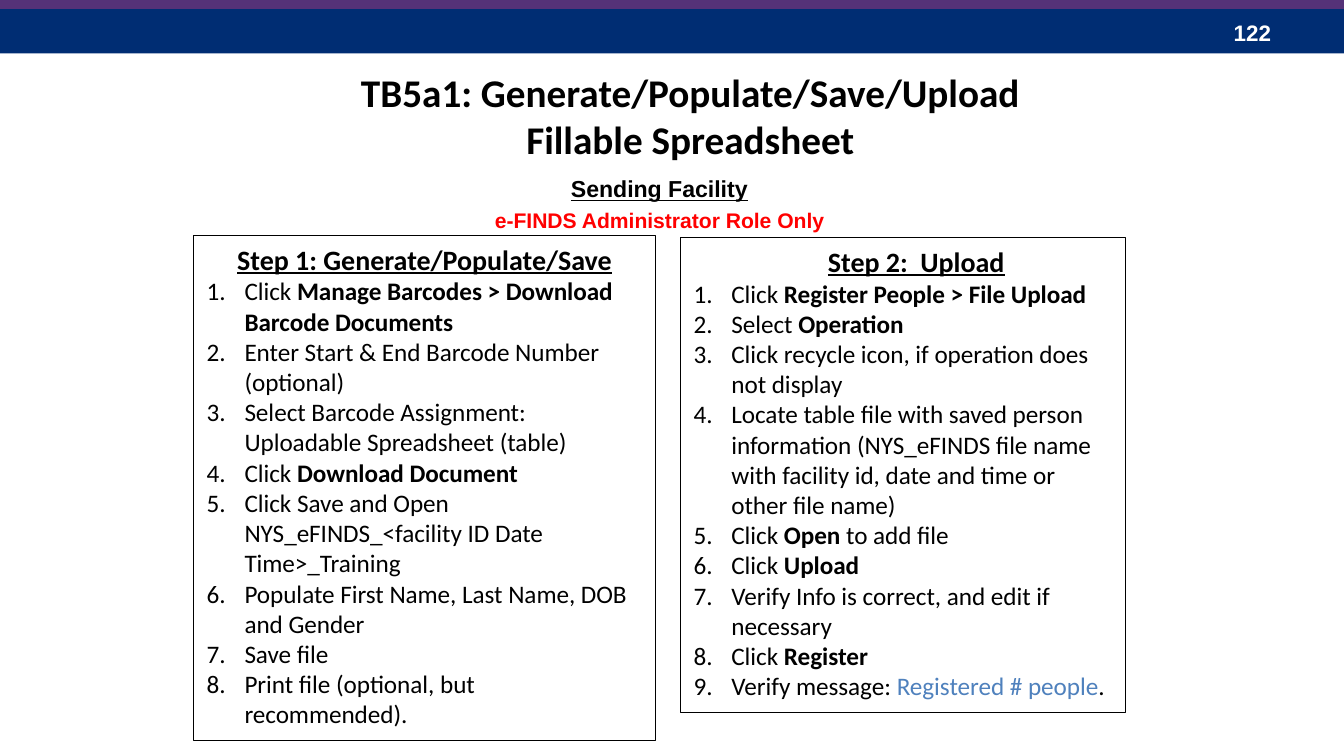
from lxml.etree import SubElement
from pptx import Presentation
from pptx.dml.color import RGBColor
from pptx.enum.shapes import MSO_SHAPE
from pptx.enum.text import MSO_ANCHOR, MSO_AUTO_SIZE, PP_ALIGN
from pptx.oxml.ns import qn
from pptx.util import Pt

COLORS = {"navy": "002D73", "purple": "553278", "white": "FFFFFF",
          "black": "000000", "red": "FF0000", "blue": "4F81BD"}
TITLE = ["TB5a1: Generate/Populate/Save/Upload", "Fillable Spreadsheet"]
SUBTITLES = [("Sending Facility", 12.4, "black", True),
             ("e-FINDS Administrator Role Only", 11.25, "red", False)]
BANDS = [(4.8, 23.8, "navy"), (-1.5, 6.3, "purple")]
PANELS = [
    {"heading": "Step 1: Generate/Populate/Save", "tab": False,
     "box": (103.7, 126.2, 247.7, 270.7),
     "steps": [
         [("Click ", ""), ("Manage Barcodes > Download Barcode Documents", "bold")],
         [("Enter Start & End Barcode Number (optional)", "")],
         [("Select Barcode Assignment: Uploadable Spreadsheet (table)", "")],
         [("Click ", ""), ("Download Document", "bold")],
         [("Click Save and Open NYS_eFINDS_<facility ID Date Time>_Training", "")],
         [("Populate First Name, Last Name, DOB and Gender", "")],
         [("Save file", "")],
         [("Print file (optional, but recommended).", "")]]},
    {"heading": "Step 2:  Upload", "tab": True,
     "box": (364.5, 127.3, 238.5, 254.3),
     "steps": [
         [("Click ", ""), ("Register People > File Upload", "bold")],
         [("Select ", ""), ("Operation", "bold")],
         [("Click recycle icon, if operation does not display", "")],
         [("Locate table file with saved person information (NYS_eFINDS file "
           "name with facility id, date and time or other file name)", "")],
         [("Click ", ""), ("Open", "bold"), (" to add file", "")],
         [("Click ", ""), ("Upload", "bold")],
         [("Verify Info is correct, and edit if necessary", "")],
         [("Click ", ""), ("Register", "bold")],
         [("Verify message: ", ""), ("Registered # people", "blue"), (".", "")]]},
]


def rgb(name):
    return RGBColor.from_string(COLORS[name])


def add_run(p, text, size, font="Calibri", color="black", bold=False, underline=False):
    r = p.add_run()
    r.text = text
    r.font.size, r.font.name = Pt(size), font
    r.font.bold, r.font.underline = bold, underline
    r.font.color.rgb = rgb(color)


def place(sp, left, top, width, height):
    sp.left, sp.top, sp.width, sp.height = Pt(left), Pt(top), Pt(width), Pt(height)


def add_rect(s, left, top, width, height):
    sp = s.shapes.add_shape(MSO_SHAPE.RECTANGLE, Pt(left), Pt(top), Pt(width), Pt(height))
    sp.shadow.inherit = False
    return sp


def next_paragraph(tf, first):
    return tf.paragraphs[0] if first else tf.add_paragraph()


def set_indent(p, left, hanging):
    pPr = p._p.get_or_add_pPr()
    pPr.set("marL", str(Pt(left)))
    pPr.set("indent", str(-Pt(hanging)))
    return pPr


def add_panel(s, panel):
    sp = add_rect(s, *panel["box"])
    sp.fill.background()
    sp.line.color.rgb = rgb("black")
    sp.line.width = Pt(0.75)
    tf = sp.text_frame
    tf.word_wrap = True
    tf.auto_size = MSO_AUTO_SIZE.SHAPE_TO_FIT_TEXT
    tf.vertical_anchor = MSO_ANCHOR.TOP
    p = tf.paragraphs[0]
    if panel["tab"]:
        p.alignment = PP_ALIGN.LEFT
        tabs = SubElement(p._p.get_or_add_pPr(), qn("a:tabLst"))
        SubElement(tabs, qn("a:tab"), pos=str(Pt(72)), algn="l")
        add_run(p, "\t", 12)
    else:
        p.alignment = PP_ALIGN.CENTER
    add_run(p, panel["heading"], 15, bold=True, underline=True)
    for step in panel["steps"]:
        p = tf.add_paragraph()
        p.alignment = PP_ALIGN.LEFT
        pPr = set_indent(p, 20.25, 20.25)
        SubElement(pPr, qn("a:buFont"), typeface="+mj-lt")
        SubElement(pPr, qn("a:buAutoNum"), type="arabicPeriod")
        for text, style in step:
            add_run(p, text, 13.5, color="blue" if style == "blue" else "black",
                    bold=style == "bold")


def main():
    prs = Presentation()
    prs.slide_width, prs.slide_height = Pt(720), Pt(405)
    s = prs.slides.add_slide(prs.slide_layouts[1])

    for top, height, color in BANDS:
        sp = add_rect(s, 0, top, 720, height)
        sp.fill.solid()
        sp.fill.fore_color.rgb = rgb(color)
        sp.line.fill.background()

    number = s.shapes.add_textbox(Pt(653.8), Pt(6.9), Pt(54), Pt(21.6))
    number.text_frame.word_wrap = True
    add_run(number.text_frame.paragraphs[0], "122", 12, "Arial", "white", True)

    title = s.shapes.title
    place(title, 144.5, 28, 450.7, 67.5)
    tf = title.text_frame
    tf.auto_size = MSO_AUTO_SIZE.NONE
    tf.vertical_anchor = MSO_ANCHOR.MIDDLE
    p = tf.paragraphs[0]
    p.alignment = PP_ALIGN.CENTER
    for i, line in enumerate(TITLE):
        if i:
            p.add_line_break()
        add_run(p, line, 21, bold=True)

    body = s.placeholders[1]
    place(body, 90, 90, 526.5, 301.5)
    tf = body.text_frame
    tf.auto_size = MSO_AUTO_SIZE.NONE
    for i, (text, size, color, underline) in enumerate(SUBTITLES):
        p = next_paragraph(tf, i == 0)
        p.alignment = PP_ALIGN.CENTER
        p.space_before = Pt(2.5 * i)
        SubElement(set_indent(p, 0, 0), qn("a:buNone"))
        add_run(p, text, size, "Arial", color, True, underline)

    for panel in PANELS:
        add_panel(s, panel)

    prs.save("out.pptx")


if __name__ == "__main__":
    main()
